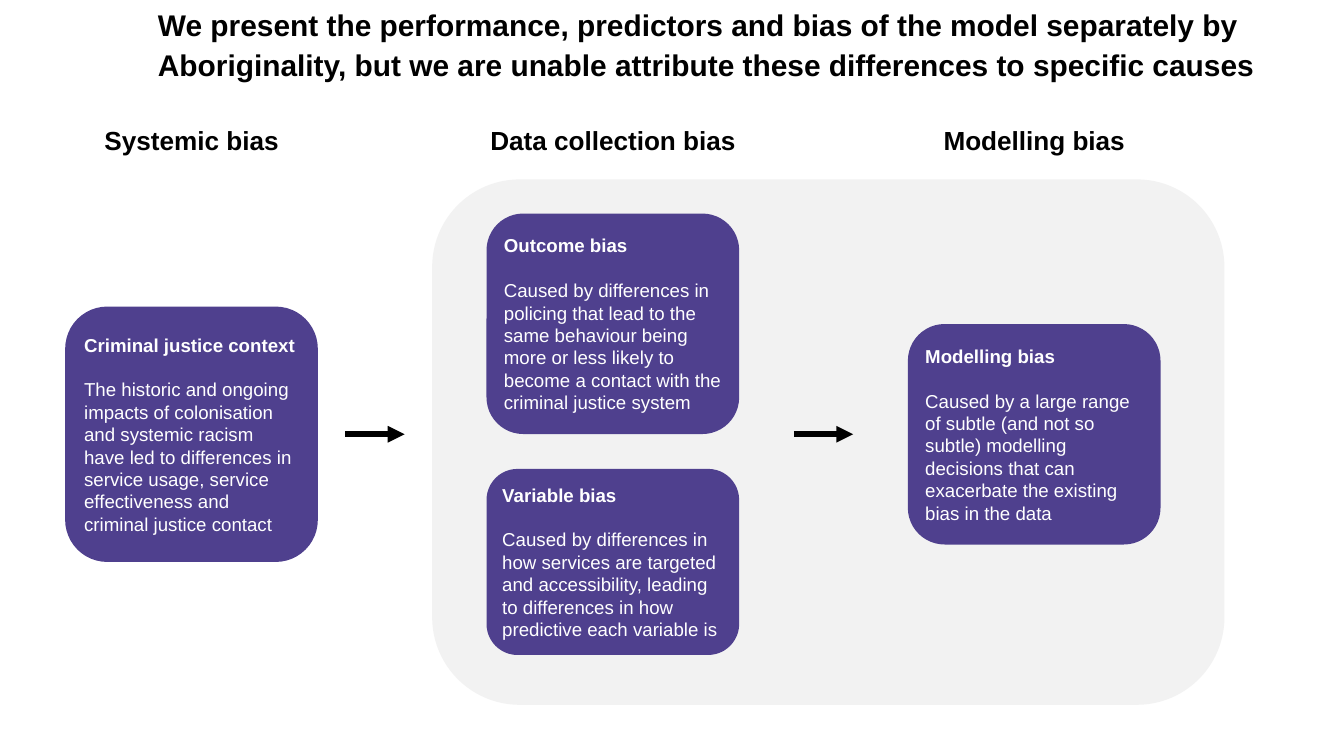
from dataclasses import dataclass

from lxml.etree import SubElement
from pptx import Presentation
from pptx.dml.color import RGBColor
from pptx.enum.shapes import MSO_CONNECTOR, MSO_SHAPE
from pptx.enum.text import MSO_ANCHOR, MSO_AUTO_SIZE, PP_ALIGN
from pptx.oxml.ns import qn
from pptx.util import Pt


@dataclass(frozen=True)
class Theme:
    font: str = "Arial"
    black: RGBColor = RGBColor(0, 0, 0)
    white: RGBColor = RGBColor(255, 255, 255)
    purple: RGBColor = RGBColor(0x4F, 0x40, 0x8E)
    grey: RGBColor = RGBColor(0xF2, 0xF2, 0xF2)
    title_size: int = 32
    heading_size: int = 28
    body_size: int = 20


THEME = Theme()

# Layout in points
COLUMN_CENTERS = [205.2 + 451.44 * column for column in range(3)]
MIDDLE = 465.3
BOX_WIDTH = 270.7
BOX_GAP = 37.4
PANEL_LEFT = 463
ARROW_LENGTH = 63.4

TITLE = ("We present the performance, predictors and bias of the model separately by "
         "Aboriginality, but we are unable attribute these differences to specific causes")

# Each column: heading, then boxes as (title, explanation, height)
COLUMNS = [
    ("Systemic bias", [
        ("Criminal justice context",
         "The historic and ongoing impacts of colonisation and systemic racism have led to "
         "differences in service usage, service effectiveness and criminal justice contact",
         273.6)]),
    ("Data collection bias", [
        ("Outcome bias",
         "Caused by differences in policing that lead to the same behaviour being more or "
         "less likely to become a contact with the criminal justice system",
         236.2),
        ("Variable bias",
         "Caused by differences in how services are targeted and accessibility, leading to "
         "differences in how predictive each variable is",
         199.4)]),
    ("Modelling bias", [
        ("Modelling bias",
         "Caused by a large range of subtle (and not so subtle) modelling decisions that can "
         "exacerbate the existing bias in the data",
         236.2)]),
]


def write_text(paragraph, text, *, size, color, bold=False, align=PP_ALIGN.LEFT,
               before=0, after=0, spacing=1.0):
    paragraph.alignment = align
    paragraph.space_before = Pt(before)
    paragraph.space_after = Pt(after)
    paragraph.line_spacing = spacing
    run = paragraph.add_run()
    run.text = text
    run.font.name = THEME.font
    run.font.size = Pt(size)
    run.font.bold = bold
    run.font.color.rgb = color


def place_title(slide):
    title = slide.shapes.title
    title.left, title.top, title.width, title.height = Pt(162), Pt(0), Pt(1215.4), Pt(72)
    frame = title.text_frame
    frame.word_wrap = True
    frame.auto_size = MSO_AUTO_SIZE.NONE
    frame.vertical_anchor = MSO_ANCHOR.TOP
    write_text(frame.paragraphs[0], TITLE, size=THEME.title_size, color=THEME.black,
               bold=True, before=15, spacing=1.1)


def add_rounded(shapes, left, top, width, height, fill):
    shape = shapes.add_shape(MSO_SHAPE.ROUNDED_RECTANGLE,
                             Pt(left), Pt(top), Pt(width), Pt(height))
    shape.shadow.inherit = False
    shape.fill.solid()
    shape.fill.fore_color.rgb = fill
    shape.line.fill.background()
    return shape


def add_heading(slide, center, text):
    width = 290.2
    box = slide.shapes.add_textbox(Pt(center - width / 2), Pt(129.6), Pt(width), Pt(41))
    box.text_frame.word_wrap = True
    write_text(box.text_frame.paragraphs[0], text, size=THEME.heading_size,
               color=THEME.black, bold=True, align=PP_ALIGN.CENTER)


def add_box(shapes, center, top, title, explanation, height):
    box = add_rounded(shapes, center - BOX_WIDTH / 2, top, BOX_WIDTH, height, THEME.purple)
    frame = box.text_frame
    frame.word_wrap = True
    frame.vertical_anchor = MSO_ANCHOR.MIDDLE
    write_text(frame.paragraphs[0], title, size=THEME.body_size, color=THEME.white,
               bold=True, after=24)
    write_text(frame.add_paragraph(), explanation, size=THEME.body_size, color=THEME.white)


def add_stack(slide, center, boxes):
    """Stack the boxes of one column around the middle line."""
    shapes = slide.shapes.add_group_shape().shapes if len(boxes) > 1 else slide.shapes
    total = sum(height for _, _, height in boxes) + BOX_GAP * (len(boxes) - 1)
    top = MIDDLE - total / 2
    for title, explanation, height in boxes:
        add_box(shapes, center, top, title, explanation, height)
        top += height + BOX_GAP


def add_arrow(slide, gap_left, gap_right):
    """Centre an arrow in the gap between two shapes."""
    start = (gap_left + gap_right - ARROW_LENGTH) / 2
    arrow = slide.shapes.add_connector(MSO_CONNECTOR.STRAIGHT, Pt(start), Pt(MIDDLE),
                                       Pt(start + ARROW_LENGTH), Pt(MIDDLE))
    arrow.line.color.rgb = THEME.black
    arrow.line.width = Pt(6)
    SubElement(arrow.line._get_or_add_ln(), qn("a:tailEnd"), type="triangle")
    SubElement(arrow._element.spPr, qn("a:effectLst"))


def main():
    presentation = Presentation()
    presentation.slide_width, presentation.slide_height = Pt(1440), Pt(810)
    slide = presentation.slides.add_slide(presentation.slide_layouts.get_by_name("Title Only"))

    # Background panel and title
    add_rounded(slide.shapes, PANEL_LEFT, 192.2, 848.9, 563, THEME.grey)
    place_title(slide)

    # Columns of bias types
    for center, (heading, boxes) in zip(COLUMN_CENTERS, COLUMNS):
        add_heading(slide, center, heading)
        add_stack(slide, center, boxes)

    # Arrows between the columns
    half = BOX_WIDTH / 2
    first, second, third = COLUMN_CENTERS
    add_arrow(slide, first + half, PANEL_LEFT)
    add_arrow(slide, second + half, third - half)

    presentation.save("out.pptx")


if __name__ == "__main__":
    main()
